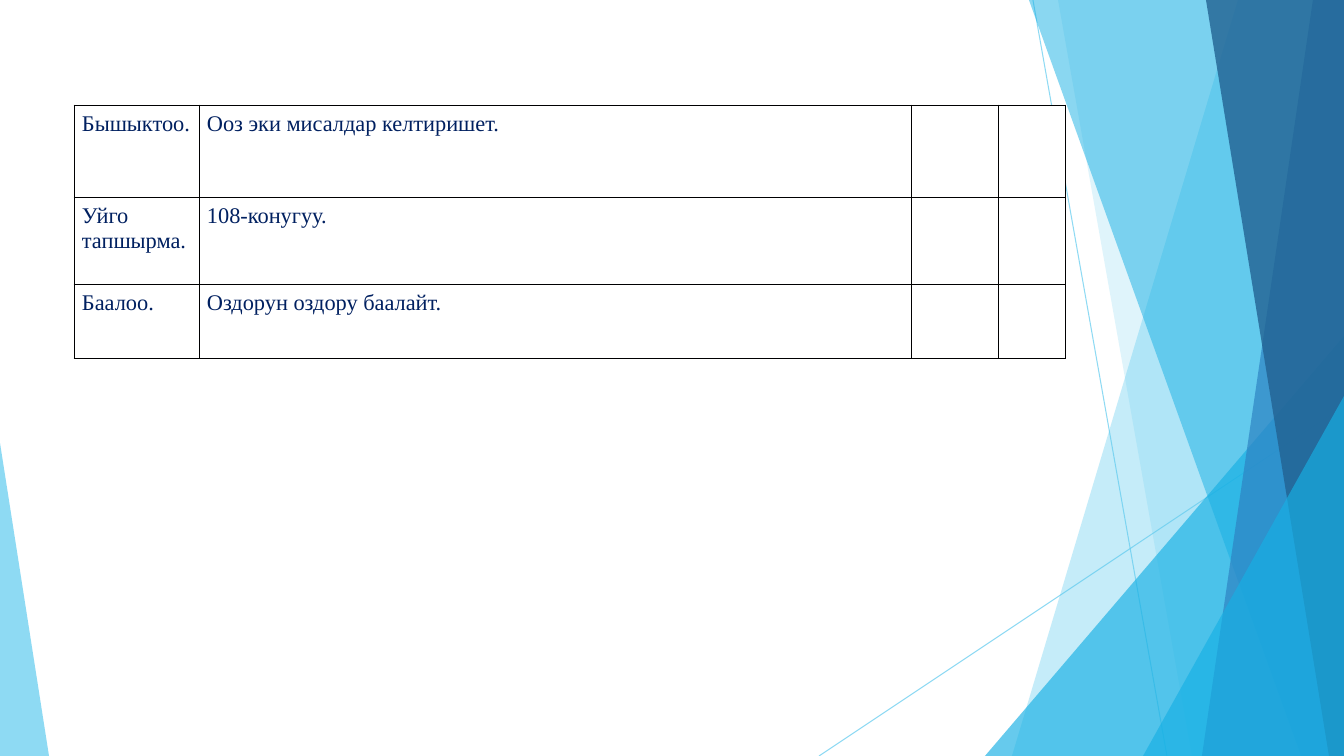
import pptx
import pptx.dml.color
import pptx.enum.shapes
import pptx.oxml
import pptx.oxml.ns
import pptx.util

PX = 914400 / 100.8
SLIDE_WIDTH, SLIDE_HEIGHT = 1344, 756
COLORS = {
    "sky": "5FCBEF",
    "cyan": "17B0E4",
    "blue": "2E83C3",
    "navy": "226292",
    "text": "002060",
    "border": "000001",
    "cell": "FFFFFF",
}
FONT = "Times New Roman"
COLUMN_WIDTHS = [125, 713, 87, 67]
ROW_HEIGHTS = [92, 87, 74]
LESSON_STEPS = [
    ["Бышыктоо.", "Ооз эки мисалдар келтиришет."],
    ["Уйго тапшырма.", "108-конугуу."],
    ["Баалоо.", "Оздорун оздору баалайт."],
]


def px(length):
    return pptx.util.Emu(round(length * PX))


def color(name):
    return pptx.dml.color.RGBColor.from_string(COLORS[name])


def set_opacity(shape, percent):
    for color_element in shape._element.spPr.iter(pptx.oxml.ns.qn("a:srgbClr")):
        alpha = color_element.makeelement(pptx.oxml.ns.qn("a:alpha"), {"val": str(percent * 1000)})
        color_element.append(alpha)


def fill_facet(shape, fill_name, opacity):
    shape.shadow.inherit = False
    shape.fill.solid()
    shape.fill.fore_color.rgb = color(fill_name)
    shape.line.fill.background()
    set_opacity(shape, opacity)


def add_thin_line(slide, start, end):
    line = slide.shapes.add_connector(
        pptx.enum.shapes.MSO_CONNECTOR.STRAIGHT, *map(px, start), *map(px, end)
    )
    line.line.color.rgb = color("sky")
    line.line.width = pptx.util.Pt(0.75)
    set_opacity(line, 70)
    properties = line._element.spPr
    properties.append(properties.makeelement(pptx.oxml.ns.qn("a:effectLst"), {}))


def add_slanted_facet(slide, box, top_offset, bottom_offset, fill_name, opacity):
    """Fill the box to the right of a slanted edge running from top to bottom."""
    left, top, width, height = box
    right, bottom = left + width, top + height
    builder = slide.shapes.build_freeform(left + top_offset, top, scale=PX)
    builder.add_line_segments([(right, top), (right, bottom), (left + bottom_offset, bottom)])
    fill_facet(builder.convert_to_shape(), fill_name, opacity)


def add_corner_triangle(slide, box, apex, fill_name, opacity):
    """Add a right triangle; apex 0 puts its tip top left, 1 top right."""
    triangle = slide.shapes.add_shape(
        pptx.enum.shapes.MSO_SHAPE.ISOSCELES_TRIANGLE, *map(px, box)
    )
    triangle.adjustments[0] = apex
    fill_facet(triangle, fill_name, opacity)


def add_right_facets(slide, box):
    left, top, width, height = box
    right, bottom = left + width, top + height

    def add_bottom_triangle(triangle_width, triangle_height):
        triangle_box = (right - triangle_width, bottom - triangle_height, triangle_width, triangle_height)
        add_corner_triangle(slide, triangle_box, 1, "cyan", 66)

    add_thin_line(slide, (left + 214, top), (left + 348, bottom))
    add_thin_line(slide, (right, top + 406), (left, bottom))
    add_slanted_facet(slide, box, 419, 193, "sky", 36)
    add_slanted_facet(slide, box, 239, 373, "sky", 20)
    add_bottom_triangle(359, 420)
    add_slanted_facet(slide, box, 210, 482, "cyan", 50)
    add_slanted_facet(slide, box, 494, 383, "blue", 70)
    add_slanted_facet(slide, box, 387, 510, "navy", 80)
    add_bottom_triangle(201, 360)


def set_borders(cell):
    properties = cell._tc.get_or_add_tcPr()
    for position, side in enumerate(("lnL", "lnR", "lnT", "lnB")):
        border = pptx.oxml.parse_xml(
            f'<a:{side} {pptx.oxml.ns.nsdecls("a")} w="{pptx.util.Pt(0.75)}"><a:solidFill>'
            f'<a:srgbClr val="{COLORS["border"]}"/></a:solidFill></a:{side}>'
        )
        properties.insert(position, border)


def format_cell(cell):
    cell.fill.solid()
    cell.fill.fore_color.rgb = color("cell")
    cell.margin_left = cell.margin_right = px(8)
    cell.margin_top = cell.margin_bottom = px(7)
    set_borders(cell)


def write_cell(cell, text):
    run = cell.text_frame.paragraphs[0].add_run()
    run.text = text
    run.font.name = FONT
    run.font.size = pptx.util.Pt(16)
    run.font.color.rgb = color("text")


def add_lesson_table(slide, left, top):
    table = slide.shapes.add_table(
        len(ROW_HEIGHTS), len(COLUMN_WIDTHS),
        px(left), px(top), px(sum(COLUMN_WIDTHS)), px(sum(ROW_HEIGHTS)),
    ).table
    table.first_row = table.horz_banding = False
    for column, width in zip(table.columns, COLUMN_WIDTHS):
        column.width = px(width)
    for row, height, texts in zip(table.rows, ROW_HEIGHTS, LESSON_STEPS):
        row.height = px(height)
        for cell in row.cells:
            format_cell(cell)
        for cell, text in zip(row.cells, texts):
            write_cell(cell, text)


def main():
    presentation = pptx.Presentation()
    presentation.slide_width = px(SLIDE_WIDTH)
    presentation.slide_height = px(SLIDE_HEIGHT)
    slide = presentation.slides.add_slide(presentation.slide_layouts.get_by_name("Blank"))
    add_right_facets(slide, (819, 0, 525, SLIDE_HEIGHT))
    add_corner_triangle(slide, (0, 443, 49, 313), 0, "sky", 70)
    add_lesson_table(slide, 74, 105)
    presentation.save("out.pptx")


if __name__ == "__main__":
    main()
